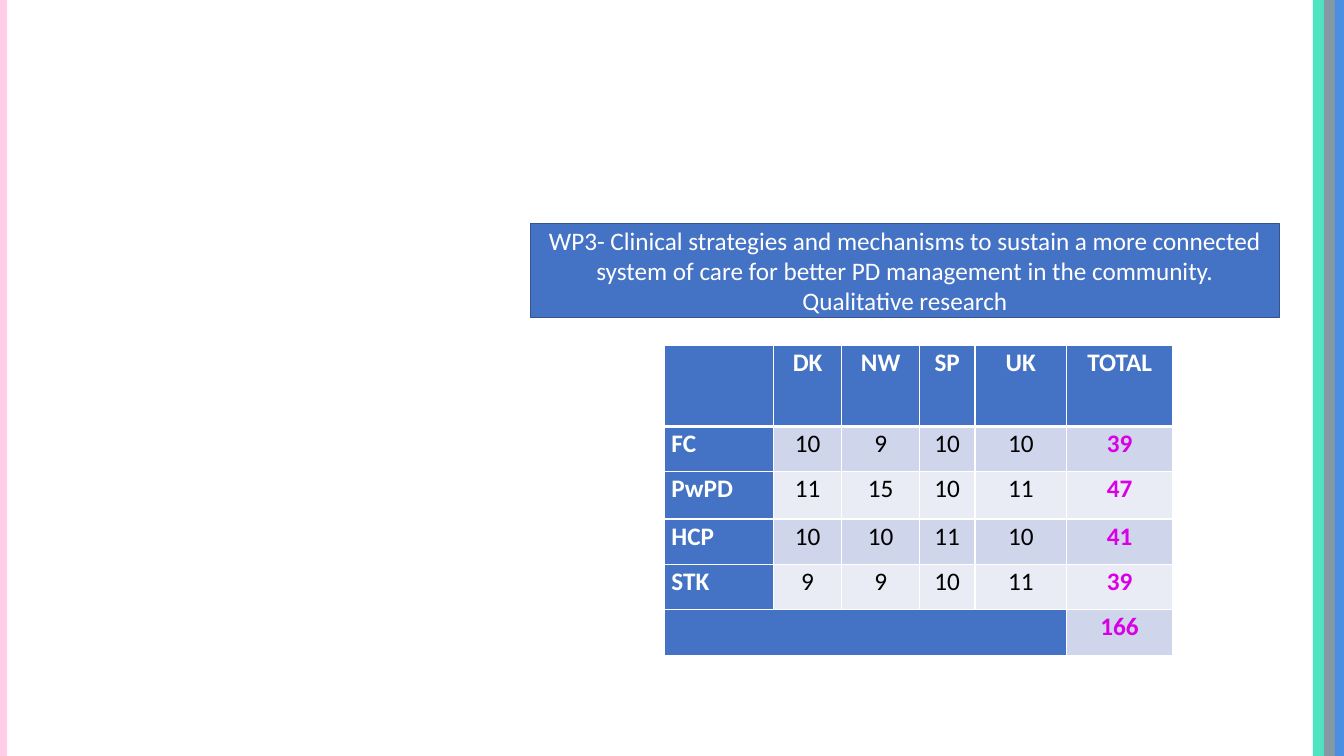
from lxml import etree
from pptx import Presentation
from pptx.dml.color import RGBColor
from pptx.enum.shapes import MSO_SHAPE
from pptx.enum.text import MSO_ANCHOR, PP_ALIGN
from pptx.oxml.ns import qn
from pptx.util import Inches, Pt

RECTANGLE = MSO_SHAPE.RECTANGLE
MIDDLE = MSO_ANCHOR.MIDDLE
LEFT, CENTER = PP_ALIGN.LEFT, PP_ALIGN.CENTER

HEADING = ("WP3- Clinical strategies and mechanisms to sustain a more connected "
           "system of care for better PD management in the community. "
           "Qualitative research")
COUNTRIES = ["DK", "NW", "SP", "UK"]
PARTICIPANTS = {
    "FC": [10, 9, 10, 10],
    "PwPD": [11, 15, 10, 11],
    "HCP": [10, 10, 11, 10],
    "STK": [9, 9, 10, 11],
}
STRIPES = [
    (13.02, 0.12, "50E3C2"),
    (13.13, 0.12, "8698A3"),
    (13.24, 0.12, "4A8FE2"),
    (-0.04, 0.11, "FFCDE8"),
]
HEADING_BOX = (5.26, 2.22, 7.43, 0.93)
TABLE_ORIGIN = (6.59, 3.43)
COLUMN_WIDTHS = [1.08, 0.68, 0.77, 0.55, 0.91, 1.05]
ROW_HEIGHTS = [0.8, 0.45, 0.47, 0.45, 0.45, 0.45]
SLIDE_WIDTH, SLIDE_HEIGHT = 13.33, 7.5

THEME = {
    "font": "Calibri", "size": 18,
    "accent": "4472C4", "outline": "325491", "white": "FFFFFF",
    "text": "000000", "total": "D900E7", "bands": ["E9EBF5", "CFD5EA"],
}


def rgb(value):
    return RGBColor.from_string(value)


def add_block(slide, box, fill):
    block = slide.shapes.add_shape(RECTANGLE, *map(Inches, box))
    block.shadow.inherit = False
    block.fill.solid()
    block.fill.fore_color.rgb = rgb(fill)
    block.line.fill.background()
    return block


def write(frame, text, color, align, bold=False):
    frame.text = text
    paragraph = frame.paragraphs[0]
    paragraph.alignment = align
    font = paragraph.font
    font.name, font.size = THEME["font"], Pt(THEME["size"])
    font.bold, font.color.rgb = bold, rgb(color)
    return paragraph


def add_borders(cell, bottom_width):
    properties = cell._tc.get_or_add_tcPr()
    widths = {"a:lnL": 1, "a:lnR": 1, "a:lnT": 1, "a:lnB": bottom_width}
    for index, (side, width) in enumerate(widths.items()):
        line = etree.Element(qn(side), w=str(Pt(width)))
        fill = etree.SubElement(line, qn("a:solidFill"))
        etree.SubElement(fill, qn("a:srgbClr"), val=THEME["white"])
        properties.insert(index, line)


def cell_style(row, column, last_row, last_column):
    band = THEME["bands"][row % 2]
    if row == 0:
        return THEME["accent"], THEME["white"], CENTER, True
    if column == last_column:
        return band, THEME["total"], CENTER, True
    if column == 0 or row == last_row:
        return THEME["accent"], THEME["white"], LEFT, True
    return band, THEME["text"], CENTER, False


def add_participants(slide):
    rows = [["", *COUNTRIES, "TOTAL"]]
    rows += [[group, *counts, sum(counts)] for group, counts in PARTICIPANTS.items()]
    grand_total = sum(map(sum, PARTICIPANTS.values()))
    rows.append([""] * (len(COUNTRIES) + 1) + [grand_total])
    size = (sum(COLUMN_WIDTHS), sum(ROW_HEIGHTS))
    table = slide.shapes.add_table(
        len(rows), len(rows[0]), *map(Inches, TABLE_ORIGIN + size)).table
    for column, width in zip(table.columns, COLUMN_WIDTHS):
        column.width = Inches(width)
    for row, height in zip(table.rows, ROW_HEIGHTS):
        row.height = Inches(height)
    last_row, last_column = len(rows) - 1, len(rows[0]) - 1
    for r, values in enumerate(rows):
        for c, value in enumerate(values):
            cell = table.cell(r, c)
            fill, color, align, bold = cell_style(r, c, last_row, last_column)
            cell.margin_left = cell.margin_right = Inches(0.07)
            cell.margin_top = cell.margin_bottom = 0
            cell.fill.solid()
            cell.fill.fore_color.rgb = rgb(fill)
            paragraph = write(cell.text_frame, str(value), color, align, bold)
            paragraph.line_spacing = 1.07
            paragraph.space_after = Pt(8)
            add_borders(cell, 3 if r == 0 else 1)
    table.cell(last_row, 0).merge(table.cell(last_row, last_column - 1))


def main():
    deck = Presentation()
    deck.slide_width, deck.slide_height = Inches(SLIDE_WIDTH), Inches(SLIDE_HEIGHT)
    slide = deck.slides.add_slide(deck.slide_layouts[6])
    for left, width, fill in STRIPES:
        add_block(slide, (left, 0, width, SLIDE_HEIGHT), fill)
    heading = add_block(slide, HEADING_BOX, THEME["accent"])
    heading.line.color.rgb = rgb(THEME["outline"])
    heading.line.width = Pt(1)
    heading.text_frame.word_wrap = True
    heading.text_frame.vertical_anchor = MIDDLE
    write(heading.text_frame, HEADING, THEME["white"], CENTER)
    add_participants(slide)
    deck.save("out.pptx")


if __name__ == "__main__":
    main()
